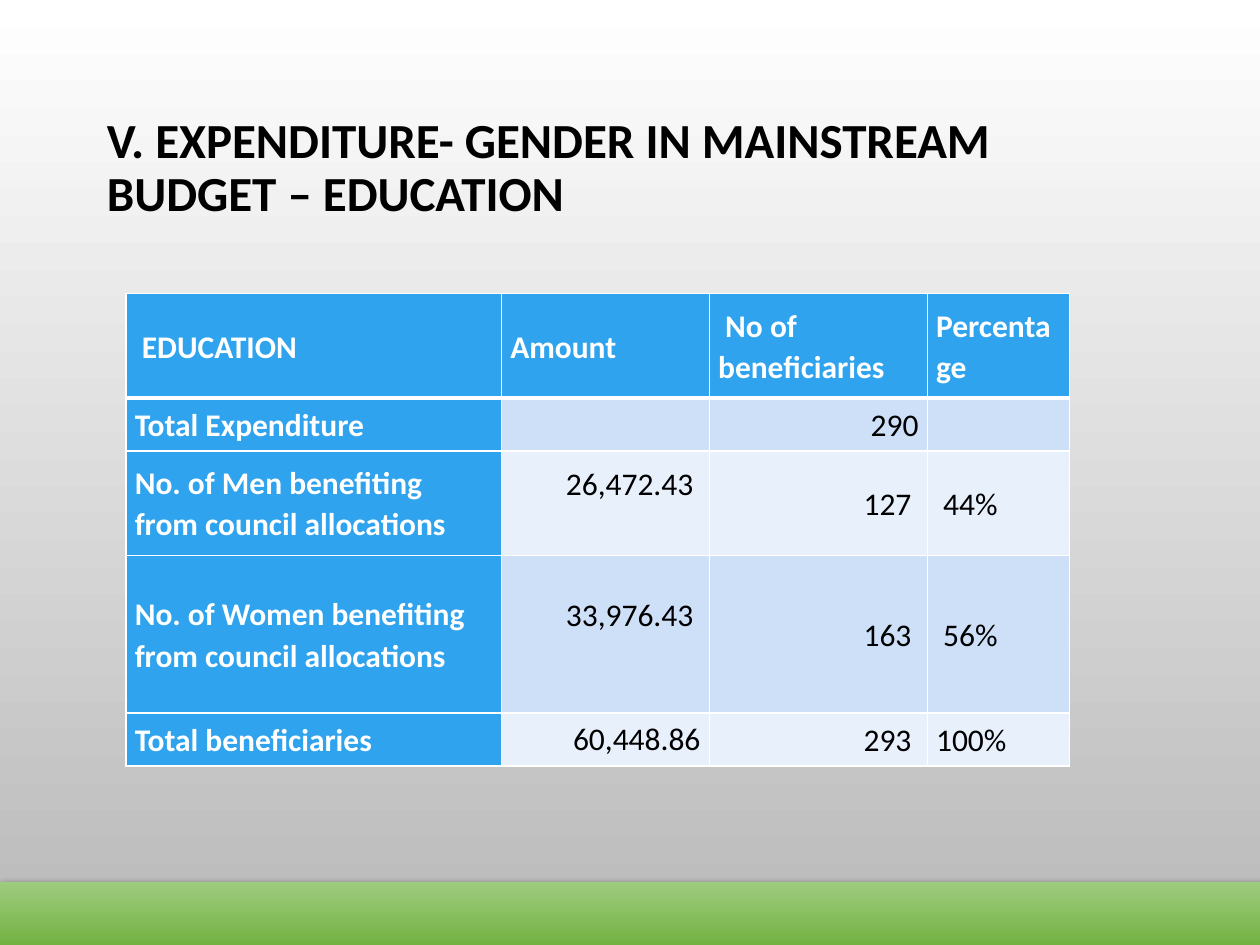
"""Build the slide on education spending by gender."""
from dataclasses import dataclass

from lxml.etree import SubElement as Sub
from pptx import Presentation
from pptx.dml.color import RGBColor as Rgb
from pptx.enum.shapes import MSO_SHAPE as Shape
from pptx.enum.text import MSO_ANCHOR as Anchor, PP_ALIGN as Align
from pptx.oxml.ns import qn
from pptx.util import Inches, Pt


@dataclass(frozen=True)
class Theme:
    font: str = "Calibri"
    title: int = 28
    body: int = 18
    ink: str = "000000"
    white: str = "FFFFFF"
    gray: str = "B9B9B9"
    blue: str = "2FA3EE"
    bands: tuple = ("CDE0F8", "E8F0FC")
    leaf: tuple = ("9ECC7E", "73B142")
    thin: float = 1
    thick: float = 3


@dataclass(frozen=True)
class Row:
    high: float
    texts: tuple
    lift: float = 0


THEME = Theme()
WIDTHS = (2.98, 1.65, 1.73, 1.13)
ROWS = (
    Row(0.83, (" EDUCATION", "Amount", " No of beneficiaries", "Percentage")),
    Row(0.42, ("Total Expenditure", "", " 290", "")),
    Row(0.83, ("No. of Men benefiting from council allocations",
               " 26,472.43 ", "127 ", " 44%"), 0.3),
    Row(1.25, ("No. of Women benefiting from council allocations",
               " 33,976.43 ", "163 ", " 56%"), 0.3),
    Row(0.42, ("Total beneficiaries", " 60,448.86", "293 ", "100% ")),
)


def shade(fill, top: str, base: str) -> None:
    fill.gradient()
    fill.gradient_angle = 270
    for stop, tone in zip(fill.gradient_stops, (top, base)):
        stop.color.rgb = Rgb.from_string(tone)


def style(par, size: int, tone: str, bold: bool) -> None:
    font = par.font
    font.name, font.size, font.bold = THEME.font, Pt(size), bold
    font.color.rgb = Rgb.from_string(tone)


def add_title(slide, text: str) -> None:
    box = slide.shapes.add_textbox(Inches(0.75), Inches(0.68), Inches(8.58), Inches(1.32))
    frame = box.text_frame
    frame.word_wrap = True
    frame.vertical_anchor = Anchor.MIDDLE
    par = frame.paragraphs[0]
    par.text = text
    par.line_spacing = 0.9
    style(par, THEME.title, THEME.ink, True)


def edge(cell, side: str, width: float) -> None:
    props = cell._tc.get_or_add_tcPr()
    line = Sub(props, qn(f"a:ln{side}"), w=str(Pt(width)))
    Sub(Sub(line, qn("a:solidFill")), qn("a:srgbClr"), val=THEME.white)


def fill_cell(cell, row: int, col: int) -> None:
    data = ROWS[row]
    head = row == 0 or col == 0
    for side in "LRTB":
        heavy = (row, side) in ((0, "B"), (1, "T"))
        edge(cell, side, THEME.thick if heavy else THEME.thin)
    cell.fill.solid()
    tone = THEME.blue if head else THEME.bands[(row - 1) % 2]
    cell.fill.fore_color.rgb = Rgb.from_string(tone)
    cell.margin_left = cell.margin_right = Inches(0.07)
    cell.margin_top = 0
    cell.margin_bottom = Inches(data.lift if col == 1 else 0)
    cell.vertical_anchor = Anchor.MIDDLE
    par = cell.text_frame.paragraphs[0]
    par.text = data.texts[col]
    if not head and col in (1, 2):
        par.alignment = Align.RIGHT
    if head or col != 1:
        par.line_spacing = 1.07
        par.space_after = Pt(8)
    style(par, THEME.body, THEME.white if head else THEME.ink, head)


def add_grid(slide) -> None:
    high = sum(row.high for row in ROWS)
    table = slide.shapes.add_table(
        len(ROWS), len(WIDTHS), Inches(1), Inches(2.33),
        Inches(sum(WIDTHS)), Inches(high)).table
    for col, width in zip(table.columns, WIDTHS):
        col.width = Inches(width)
    for row, data in enumerate(ROWS):
        table.rows[row].height = Inches(data.high)
        for col in range(len(WIDTHS)):
            fill_cell(table.cell(row, col), row, col)


def add_bar(slide) -> None:
    bar = slide.shapes.add_shape(
        Shape.RECTANGLE, 0, Inches(7), Inches(10.21), Inches(0.51))
    shade(bar.fill, *THEME.leaf)
    bar.line.fill.background()
    bar.shadow.inherit = False
    glow = Sub(bar._element.spPr.find(qn("a:effectLst")), qn("a:outerShdw"),
               blurRad=str(Pt(5)), dist=str(Pt(2)), dir="5400000", rotWithShape="0")
    Sub(Sub(glow, qn("a:srgbClr"), val=THEME.ink), qn("a:alpha"), val="69000")


def main() -> None:
    deck = Presentation()
    deck.slide_width, deck.slide_height = Inches(10), Inches(7.5)
    slide = deck.slides.add_slide(deck.slide_layouts[6])
    shade(slide.background.fill, THEME.white, THEME.gray)
    add_title(slide, "V. EXPENDITURE- GENDER IN MAINSTREAM BUDGET – EDUCATION")
    add_grid(slide)
    add_bar(slide)
    deck.save("out.pptx")


if __name__ == "__main__":
    main()
